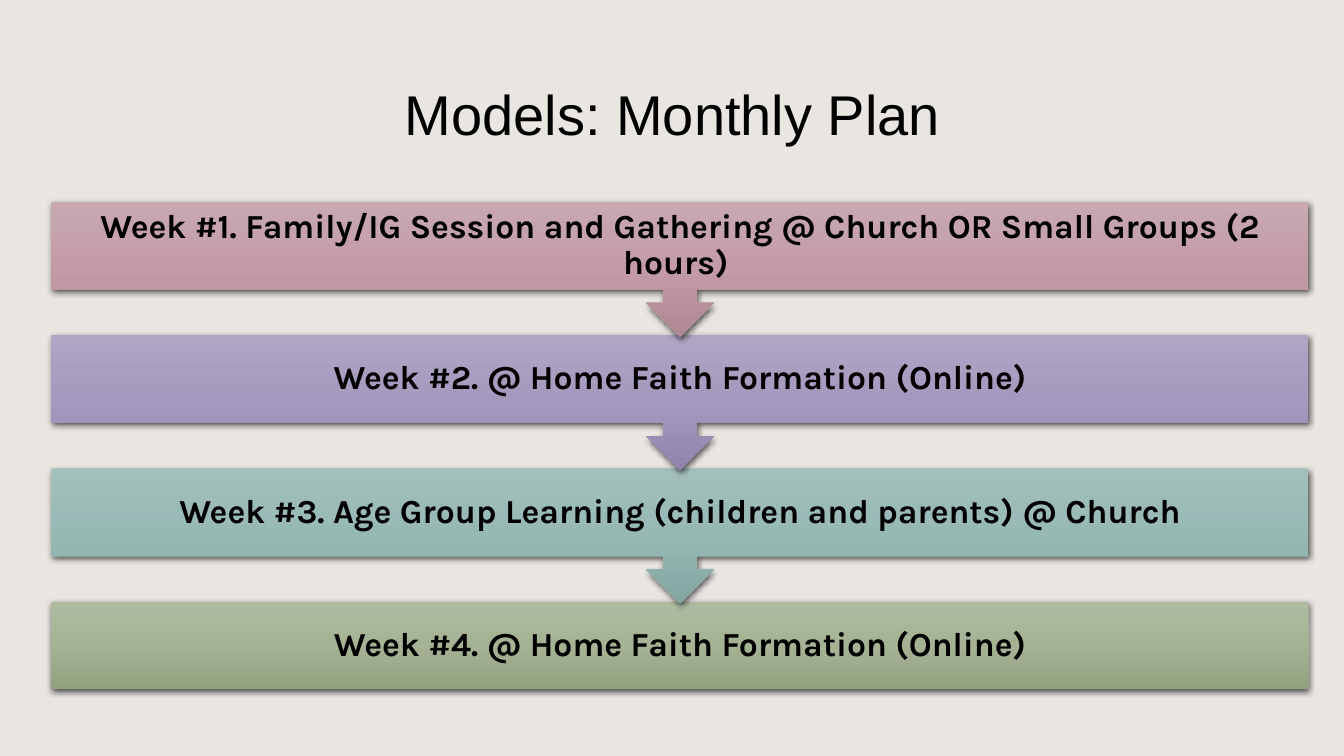
from copy import deepcopy

from lxml import etree
from pptx import Presentation
from pptx.dml.color import RGBColor
from pptx.enum.shapes import MSO_SHAPE
from pptx.enum.text import MSO_ANCHOR, PP_ALIGN
from pptx.oxml.ns import qn
from pptx.util import Inches, Pt

BACKDROP = RGBColor(0xE9, 0xE5, 0xE1)
BLACK = RGBColor(0x00, 0x00, 0x00)
ROSE = (RGBColor(0xC8, 0xA8, 0xB1), RGBColor(0xC3, 0x9B, 0xA6), RGBColor(0xAF, 0x88, 0x93))
VIOLET = (RGBColor(0xAF, 0xA6, 0xC4), RGBColor(0xA4, 0x98, 0xBE), RGBColor(0x91, 0x85, 0xAB))
TEAL = (RGBColor(0xA3, 0xBF, 0xBC), RGBColor(0x96, 0xB9, 0xB4), RGBColor(0x83, 0xA6, 0xA2))
GREEN = (RGBColor(0xAF, 0xBB, 0xA1), RGBColor(0xA5, 0xB3, 0x94), RGBColor(0x93, 0xA1, 0x81))

WEEKS = [
    ("Week #1. Family/IG Session and Gathering @ Church OR Small Groups (2 hours) ", ROSE),
    ("Week #2. @ Home Faith Formation (Online)", VIOLET),
    ("Week #3. Age Group Learning (children and parents) @ Church", TEAL),
    ("Week #4. @ Home Faith Formation (Online)", GREEN),
]
LEFT, WIDTH = 0.51, 12.47
FIRST_TOP, LAST_TOP = 2, 5.97
BAR_HEIGHT, CALLOUT_HEIGHT = 0.87, 1.34


class PlanSlide:
    title_font, week_font = "Arial", "Karla"

    def __init__(self, deck):
        self.slide = deck.slides.add_slide(deck.slide_layouts[5])
        fill = self.slide.background.fill
        fill.solid()
        fill.fore_color.rgb = BACKDROP

    def add_text(self, frame, text, font_name, size, bold):
        frame.word_wrap = True
        frame.vertical_anchor = MSO_ANCHOR.MIDDLE
        paragraph = frame.paragraphs[0]
        paragraph.alignment = PP_ALIGN.CENTER
        run = paragraph.add_run()
        run.text = text
        run.font.name = font_name
        run.font.size = Pt(size)
        run.font.bold = bold
        run.font.color.rgb = BLACK
        return paragraph

    def add_title(self, text):
        heading = self.slide.shapes.title
        heading.left, heading.top = Inches(LEFT), Inches(0.4)
        heading.width, heading.height = Inches(WIDTH), Inches(1.45)
        self.add_text(heading.text_frame, text, self.title_font, 40, False)

    def add_week(self, text, shades, top, is_last):
        """Add one bar; every bar but the last points down to the next."""
        preset = MSO_SHAPE.RECTANGLE if is_last else MSO_SHAPE.DOWN_ARROW_CALLOUT
        height = BAR_HEIGHT if is_last else CALLOUT_HEIGHT
        bar = self.slide.shapes.add_shape(
            preset, Inches(LEFT), Inches(top), Inches(WIDTH), Inches(height))
        self.shade(bar, shades)
        bar.line.fill.background()
        self.drop_shadow(bar)
        frame = bar.text_frame
        frame.margin_left = frame.margin_right = Inches(0.19)
        self.add_text(frame, text, self.week_font, 24, True).line_spacing = 0.9

    def shade(self, bar, shades):
        """Fill from top to bottom with three evenly spaced shades."""
        bar.fill.gradient()
        bar.fill.gradient_angle = 270
        stop_list = bar._element.spPr.find(".//" + qn("a:gsLst"))
        stop_list.append(deepcopy(stop_list[-1]))
        for i, (stop, shade) in enumerate(zip(bar.fill.gradient_stops, shades)):
            stop.position = i / 2
            stop.color.rgb = shade

    def drop_shadow(self, bar):
        bar.shadow.inherit = False
        effects = bar._element.spPr.find(qn("a:effectLst"))
        shadow = etree.SubElement(
            effects, qn("a:outerShdw"), blurRad=str(Pt(4.5)), dist=str(Pt(1.5)),
            dir="5400000", algn="ctr", rotWithShape="0")
        color = etree.SubElement(shadow, qn("a:srgbClr"), val=str(BLACK))
        etree.SubElement(color, qn("a:alpha"), val="63000")


def main():
    deck = Presentation()
    deck.slide_width, deck.slide_height = Inches(13.33), Inches(7.5)
    plan = PlanSlide(deck)
    plan.add_title("Models: Monthly Plan ")
    last = len(WEEKS) - 1
    pitch = (LAST_TOP - FIRST_TOP) / last
    # Bottom week first, so each arrow tip lies over the bar below it
    for i in range(last, -1, -1):
        text, shades = WEEKS[i]
        plan.add_week(text, shades, FIRST_TOP + i * pitch, i == last)
    deck.save("out.pptx")


if __name__ == "__main__":
    main()
